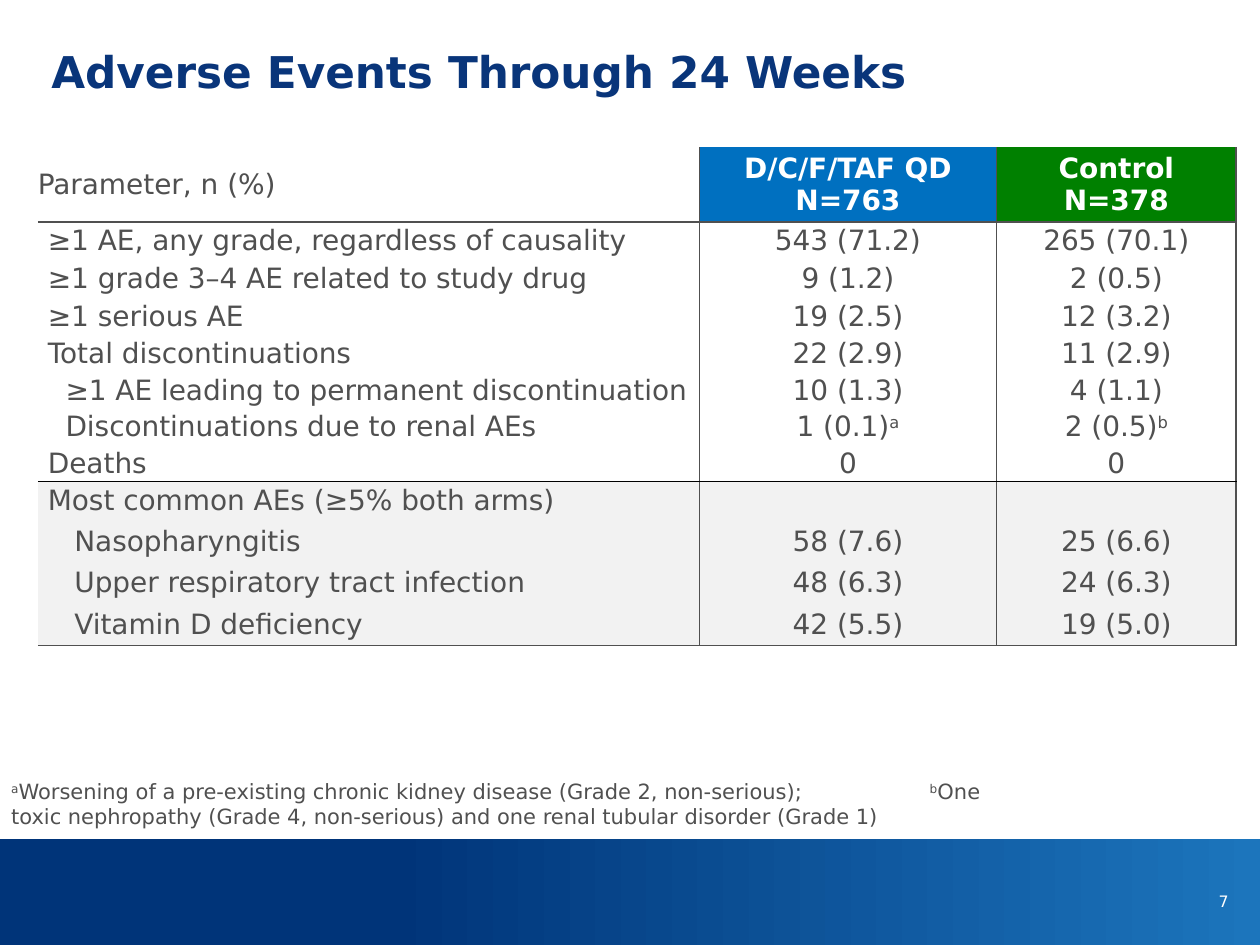
from lxml.etree import SubElement
from pptx import Presentation
from pptx.dml.color import RGBColor
from pptx.enum.shapes import MSO_SHAPE as Shape
from pptx.enum.text import MSO_ANCHOR as Anchor, MSO_AUTO_SIZE as AutoSize, PP_ALIGN as Align
from pptx.oxml.ns import qn
from pptx.util import Inches, Pt

FONT = "DejaVu Sans"
COLORS = {
    "title": "09357A", "text": "505050", "white": "FFFFFF", "divider": "000000",
    "treatment": "0070C0", "control": "008000", "common": "F2F2F2",
    "band_dark": "003479", "band_light": "1C75BC",
}
NO_STYLE = "{2D5ABB26-0587-4C30-8999-92F81FD0307C}"

# A caret switches superscript on and off
HEADER = ["Parameter, n (%)", "D/C/F/TAF QD\nN=763", "Control\nN=378"]
HEADER_FILLS = [None, "treatment", "control"]
# Indent, parameter, treatment arm, control arm
EVENTS = [
    (0.08, "≥1 AE, any grade, regardless of causality", "543 (71.2)", "265 (70.1)"),
    (0.08, "≥1 grade 3–4 AE related to study drug", "9 (1.2)", "2 (0.5)"),
    (0.08, "≥1 serious AE", "19 (2.5)", "12 (3.2)"),
    (0.08, "Total discontinuations", "22 (2.9)", "11 (2.9)"),
    (0.22, "≥1 AE leading to permanent discontinuation", "10 (1.3)", "4 (1.1)"),
    (0.22, "Discontinuations due to renal AEs", "1 (0.1)^a", "2 (0.5)^b"),
    (0.08, "Deaths", "0", "0"),
]
COMMON_EVENTS = [
    (0.08, "Most common AEs (≥5% both arms)", "", ""),
    (0.29, "Nasopharyngitis", "58 (7.6)", "25 (6.6)"),
    (0.29, "Upper respiratory tract infection", "48 (6.3)", "24 (6.3)"),
    (0.29, "Vitamin D deficiency", "42 (5.5)", "19 (5.0)"),
]
COLUMN_WIDTHS = [5.25, 2.36, 1.9]
ROW_HEIGHTS = [0.54] + [0.3] * 3 + [0.29] * 4 + [0.31] + [0.33] * 3
FOOTNOTE = ("^a^Worsening of a pre-existing chronic kidney disease (Grade 2, non-serious);\t"
            "^b^One toxic nephropathy (Grade 4, non-serious) and one renal tubular disorder (Grade 1)")


def rgb(name):
    return RGBColor.from_string(COLORS[name])


def write(paragraph, text, size, color="text", bold=False, align=Align.LEFT):
    paragraph.alignment = align
    for position, part in enumerate(text.split("^")):
        if not part:
            continue
        run = paragraph.add_run()
        run.text = part
        font = run.font
        font.name, font.size, font.bold = FONT, Pt(size), bold
        font.color.rgb = rgb(color)
        if position % 2:
            run._r.get_or_add_rPr().set("baseline", "30000")


def add_text(slide, box, text, size, color, anchor=Anchor.MIDDLE, tab=None, **style):
    frame = slide.shapes.add_textbox(*map(Inches, box)).text_frame
    frame.word_wrap = True
    frame.vertical_anchor = anchor
    paragraph = frame.paragraphs[0]
    if tab:
        stops = SubElement(paragraph._p.get_or_add_pPr(), qn("a:tabLst"))
        SubElement(stops, qn("a:tab"), pos=str(Inches(tab)), algn="l")
    write(paragraph, text, size, color, **style)
    return frame


def add_footer_band(slide):
    band = slide.shapes.add_shape(Shape.RECTANGLE, 0, Inches(6.66), Inches(10), Inches(0.85))
    band.shadow.inherit = False
    band.line.fill.background()
    band.fill.gradient()
    band.fill.gradient_angle = 0
    stops = zip(band.fill.gradient_stops, [(0.31, "band_dark"), (1, "band_light")])
    for stop, (position, color) in stops:
        stop.position = position
        stop.color.rgb = rgb(color)


def set_borders(cell, sides):
    properties = cell._tc.get_or_add_tcPr()
    for side in "LRTB":
        line = SubElement(properties, qn(f"a:ln{side}"), w=str(Pt(1)))
        if side in sides:
            solid = SubElement(line, qn("a:solidFill"))
            SubElement(solid, qn("a:srgbClr"), val=COLORS[sides[side]])
        else:
            SubElement(line, qn("a:noFill"))


def format_cell(cell, sides, fill=None, margins=(0, 0)):
    set_borders(cell, sides)
    cell.vertical_anchor = Anchor.MIDDLE
    cell.margin_left = cell.margin_right = Inches(margins[0])
    cell.margin_top = cell.margin_bottom = Inches(margins[1])
    if fill:
        cell.fill.solid()
        cell.fill.fore_color.rgb = rgb(fill)
    else:
        cell.fill.background()


def add_events_table(slide):
    rows = EVENTS + COMMON_EVENTS
    table = slide.shapes.add_table(
        len(rows) + 1, len(HEADER), Inches(0.3), Inches(1.17),
        Inches(sum(COLUMN_WIDTHS)), Inches(sum(ROW_HEIGHTS))).table
    table.first_row = table.horz_banding = False
    table._tbl.tblPr.find(qn("a:tableStyleId")).text = NO_STYLE
    for column, width in zip(table.columns, COLUMN_WIDTHS):
        column.width = Inches(width)
    for row, height in zip(table.rows, ROW_HEIGHTS):
        row.height = Inches(height)

    # Vertical rules everywhere except the outer left edge
    rules = [{"R": "text"}] + [{"L": "text", "R": "text"}] * 2

    # Header row
    for col, (label, fill) in enumerate(zip(HEADER, HEADER_FILLS)):
        cell = table.cell(0, col)
        format_cell(cell, {**rules[col], "B": "text"}, fill, (0.1, 0.04) if fill else (0, 0))
        for index, line in enumerate(label.split("\n")):
            frame = cell.text_frame
            paragraph = frame.add_paragraph() if index else frame.paragraphs[0]
            if fill:
                write(paragraph, line, 16, "white", True, Align.CENTER)
            else:
                write(paragraph, line, 16)

    # Horizontal rules under the header, above the common events and at the bottom
    first_common = len(EVENTS) + 1
    horizontal = {
        1: {"T": "text"}, len(EVENTS): {"B": "divider"},
        first_common: {"T": "divider"}, len(rows): {"B": "text"},
    }
    for row, (indent, *texts) in enumerate(rows, 1):
        fill = "common" if row >= first_common else None
        for col, text in enumerate(texts):
            cell = table.cell(row, col)
            format_cell(cell, {**rules[col], **horizontal.get(row, {})}, fill)
            paragraph = cell.text_frame.paragraphs[0]
            if col == 0:
                paragraph._p.get_or_add_pPr().set("marL", str(Inches(indent)))
            write(paragraph, text, 16, align=Align.CENTER if col else Align.LEFT)


def main():
    deck = Presentation()
    deck.slide_width, deck.slide_height = Inches(10), Inches(7.5)
    slide = deck.slides.add_slide(deck.slide_layouts[6])

    add_footer_band(slide)
    add_events_table(slide)
    add_text(slide, (0.31, 0.02, 9.01, 1.08), "Adverse Events Through 24 Weeks",
             25, "title", bold=True)
    footnote = add_text(slide, (-0.01, 6.13, 7.92, 0.5), FOOTNOTE, 12, "text",
                        anchor=Anchor.TOP, tab=7.29)
    footnote.auto_size = AutoSize.SHAPE_TO_FIT_TEXT
    add_text(slide, (9.35, 6.95, 0.5, 0.4), "7", 9, "white", align=Align.RIGHT)

    deck.save("out.pptx")


if __name__ == "__main__":
    main()
